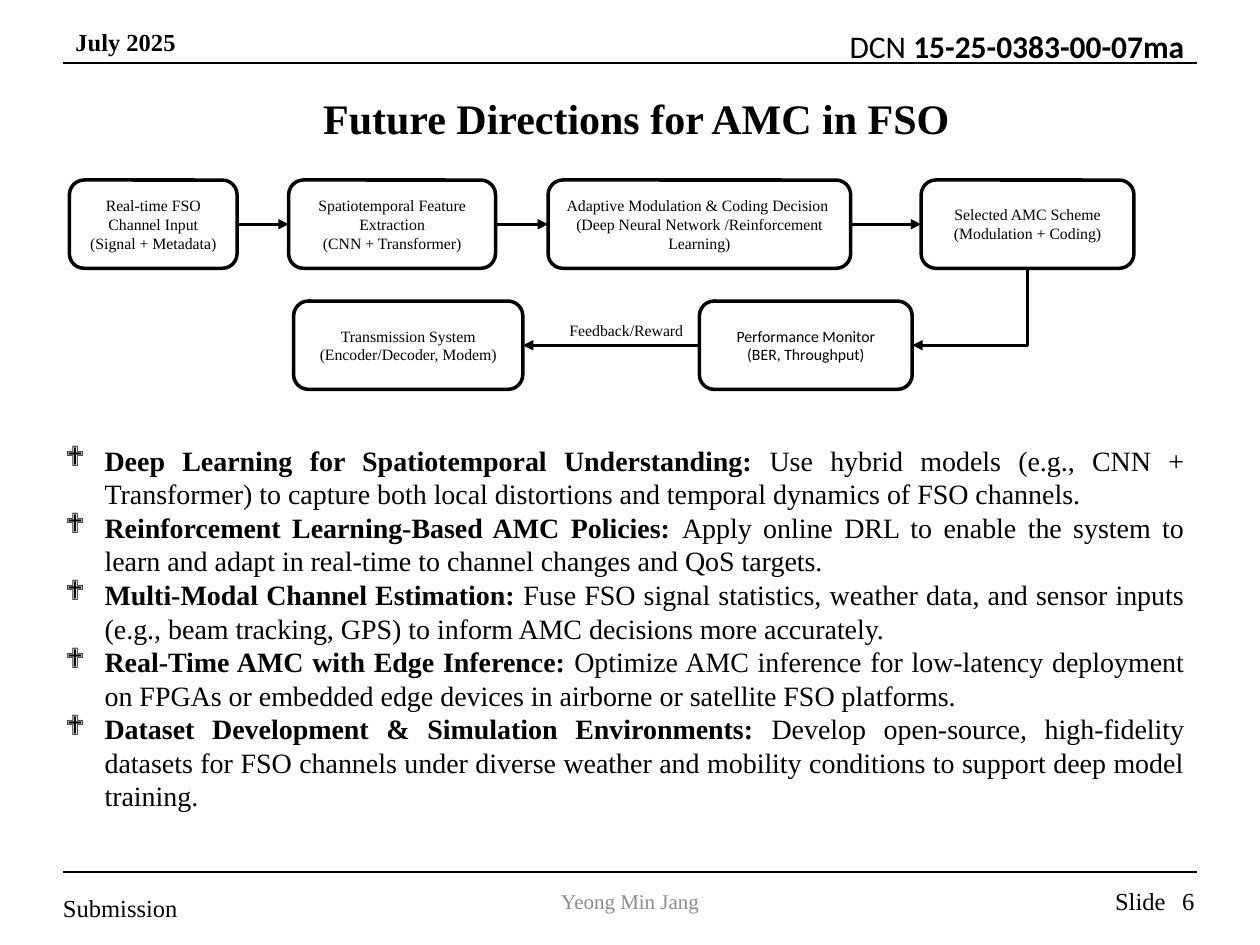
from dataclasses import dataclass

from lxml.etree import SubElement
from pptx import Presentation
from pptx.dml.color import RGBColor
from pptx.enum.shapes import MSO_CONNECTOR, MSO_SHAPE
from pptx.enum.text import MSO_ANCHOR, MSO_AUTO_SIZE, PP_ALIGN
from pptx.oxml.ns import qn
from pptx.util import Cm, Pt


@dataclass(frozen=True)
class Theme:
    ink: RGBColor = RGBColor(0, 0, 0)
    paper: RGBColor = RGBColor(255, 255, 255)
    muted: RGBColor = RGBColor(0x8C, 0x8C, 0x8C)
    serif: str = "Times New Roman"
    sans: str = "Calibri"
    title: Pt = Pt(24)
    document: Pt = Pt(18)
    body: Pt = Pt(16)
    margin: Pt = Pt(14)
    author: Pt = Pt(12)
    diagram: Pt = Pt(9)
    rule: Pt = Pt(0.75)
    arrow: Pt = Pt(1.5)
    outline: Pt = Pt(2)


THEME = Theme()
BOTTOM, LEFT, RIGHT = 2, 1, 3
STAGE_HEIGHT = 1.78
TOP_ROW, LOWER_ROW = 3.63, 6.07

# Each stage: left, top, width, lines, font
STAGES = {
    "input": (1.4, TOP_ROW, 3.38, ["Real-time FSO Channel Input", "(Signal + Metadata)"], THEME.serif),
    "features": (5.82, TOP_ROW, 4.17, ["Spatiotemporal Feature Extraction", "(CNN + Transformer)"], THEME.serif),
    "decision": (11.05, TOP_ROW, 6.1, ["Adaptive Modulation & Coding Decision ",
                                       "(Deep Neural Network /Reinforcement Learning)"], THEME.serif),
    "scheme": (18.57, TOP_ROW, 4.29, ["Selected AMC Scheme", "(Modulation + Coding)"], THEME.serif),
    "monitor": (14.1, LOWER_ROW, 4.29, ["Performance Monitor", "(BER, Throughput)"], THEME.sans),
    "transmission": (5.92, LOWER_ROW, 4.62, ["Transmission System", "(Encoder/Decoder, Modem)"], THEME.serif),
}

FLOWS = [
    ("input", RIGHT, "features", LEFT),
    ("features", RIGHT, "decision", LEFT),
    ("decision", RIGHT, "scheme", LEFT),
    ("monitor", LEFT, "transmission", RIGHT),
]

DIRECTIONS = [
    ("Deep Learning for Spatiotemporal Understanding:",
     " Use hybrid models (e.g., CNN + Transformer) to capture both local distortions "
     "and temporal dynamics of FSO channels."),
    ("Reinforcement Learning-Based AMC Policies: ",
     "Apply online DRL to enable the system to learn and adapt in real-time to "
     "channel changes and QoS targets."),
    ("Multi-Modal Channel Estimation: ",
     "Fuse FSO signal statistics, weather data, and sensor inputs (e.g., beam tracking, "
     "GPS) to inform AMC decisions more accurately."),
    ("Real-Time AMC with Edge Inference: ",
     "Optimize AMC inference for low-latency deployment on FPGAs or embedded edge "
     "devices in airborne or satellite FSO platforms."),
    ("Dataset Development & Simulation Environments: ",
     "Develop open-source, high-fidelity datasets for FSO channels under diverse weather "
     "and mobility conditions to support deep model training."),
]


def apply_format(target, values):
    for attribute, value in values.items():
        setattr(target, attribute, value)


def add_run(paragraph, text, size, color=THEME.ink, **font_values):
    run = paragraph.add_run()
    run.text = text
    apply_format(run.font, {"name": THEME.serif, "size": size, **font_values})
    run.font.color.rgb = color


def add_label(slide, box, runs, align=PP_ALIGN.LEFT, **frame_values):
    """Add a one-paragraph text box; each run is (text, size, font values)."""
    label = slide.shapes.add_textbox(*map(Cm, box))
    apply_format(label.text_frame, {"word_wrap": True, **frame_values})
    paragraph = label.text_frame.paragraphs[0]
    paragraph.alignment = align
    for text, size, font_values in runs:
        add_run(paragraph, text, size, **font_values)


def add_stage(slide, left, top, width, lines, font):
    stage = slide.shapes.add_shape(
        MSO_SHAPE.ROUNDED_RECTANGLE, Cm(left), Cm(top), Cm(width), Cm(STAGE_HEIGHT))
    stage.shadow.inherit = False
    stage.fill.solid()
    stage.fill.fore_color.rgb = THEME.paper
    stage.line.color.rgb = THEME.ink
    stage.line.width = THEME.outline
    frame = stage.text_frame
    apply_format(frame, {"word_wrap": True, "vertical_anchor": MSO_ANCHOR.MIDDLE})
    for index, line in enumerate(lines):
        paragraph = frame.add_paragraph() if index else frame.paragraphs[0]
        paragraph.alignment = PP_ALIGN.CENTER
        add_run(paragraph, line, THEME.diagram, name=font)
    return stage


def add_line(slide, start, end, width, arrow=False, kind=MSO_CONNECTOR.STRAIGHT):
    line = slide.shapes.add_connector(kind, *start, *end)
    line.line.color.rgb = THEME.ink
    line.line.width = width
    if arrow:
        SubElement(line.line._get_or_add_ln(), qn("a:tailEnd"), type="triangle")
    SubElement(line._element.spPr, qn("a:effectLst"))
    return line


def add_flow(slide, source, source_side, target, target_side):
    flow = add_line(slide, (0, 0), (0, 0), THEME.arrow, arrow=True)
    flow.begin_connect(source, source_side)
    flow.end_connect(target, target_side)


def add_corner_flow(slide, source, target):
    """Run down from the source's bottom, then left into the target's side."""
    start_x, start_y = source.left + source.width // 2, source.top + source.height
    end_x, end_y = target.left + target.width, target.top + target.height // 2
    across, down = start_x - end_x, end_y - start_y
    # The one-corner connector is turned a quarter, so its sides swap about the centre
    left = (start_x + end_x - down) // 2
    top = (start_y + end_y - across) // 2
    flow = add_line(slide, (left, top), (left + down, top + across),
                    THEME.arrow, arrow=True, kind=MSO_CONNECTOR.ELBOW)
    properties = flow._element.spPr
    properties.find(qn("a:prstGeom")).set("prst", "bentConnector2")
    properties.find(qn("a:xfrm")).set("rot", str(90 * 60000))


def add_directions(slide):
    directions = slide.shapes.add_textbox(Cm(1.07), Cm(8.81), Cm(23.06), Cm(8.03))
    frame = directions.text_frame
    frame.word_wrap = True
    for index, (heading, detail) in enumerate(DIRECTIONS):
        paragraph = frame.add_paragraph() if index else frame.paragraphs[0]
        paragraph.alignment = PP_ALIGN.JUSTIFY
        properties = paragraph._p.get_or_add_pPr()
        indent = Cm(0.79)
        properties.set("marL", str(indent))
        properties.set("indent", str(-indent))
        SubElement(properties, qn("a:buFont"), typeface="Wingdings")
        SubElement(properties, qn("a:buChar"), char="❖")
        add_run(paragraph, heading, THEME.body, bold=True)
        add_run(paragraph, detail, THEME.body)


def add_header_and_footer(slide):
    for height in (1.27, 17.58):
        add_line(slide, (Cm(1.27), Cm(height)), (Cm(24.13), Cm(height)), THEME.rule)
    middle = {"vertical_anchor": MSO_ANCHOR.MIDDLE}
    flush = dict.fromkeys(("margin_left", "margin_right", "margin_top", "margin_bottom"), 0)
    add_label(slide, (1.27, 0.43, 4.24, 0.86), [("July 2025", THEME.margin, {"bold": True})])
    add_label(slide, (15.04, 0.43, 9.09, 1.02),
              [("DCN\u00a0", THEME.document, {"name": THEME.sans}),
               ("15-25-0383-00-07ma", THEME.document, {"name": THEME.sans, "bold": True})],
              PP_ALIGN.RIGHT)
    add_label(slide, (1.27, 17.98, 4.45, 0.61), [("Submission", THEME.margin, {})],
              vertical_anchor=MSO_ANCHOR.BOTTOM, **flush)
    add_label(slide, (8.41, 17.65, 8.59, 1.02),
              [("Yeong Min Jang", THEME.author, {"color": THEME.muted})], PP_ALIGN.CENTER, **middle)
    add_label(slide, (22.23, 17.73, 1.55, 0.86), [("Slide", THEME.margin, {})],
              word_wrap=False, auto_size=MSO_AUTO_SIZE.SHAPE_TO_FIT_TEXT)
    add_label(slide, (23.06, 17.65, 1.27, 1.02), [("6", THEME.margin, {})],
              PP_ALIGN.RIGHT, **middle)


def main():
    deck = Presentation()
    deck.slide_width, deck.slide_height = Cm(25.4), Cm(19.05)
    slide = deck.slides.add_slide(deck.slide_layouts[6])

    add_header_and_footer(slide)

    # Title
    add_label(slide, (1.4, 0.79, 22.86, 3.18),
              [("Future Directions for AMC in FSO", THEME.title, {"bold": True})],
              PP_ALIGN.CENTER, vertical_anchor=MSO_ANCHOR.MIDDLE)

    add_directions(slide)

    # Processing loop
    stages = {key: add_stage(slide, *stage) for key, stage in STAGES.items()}
    for source, source_side, target, target_side in FLOWS:
        add_flow(slide, stages[source], source_side, stages[target], target_side)
    add_corner_flow(slide, stages["scheme"], stages["monitor"])
    add_label(slide, (11.23, 6.35, 2.97, 0.64), [("Feedback/Reward", THEME.diagram, {})])

    deck.save("out.pptx")


if __name__ == "__main__":
    main()
